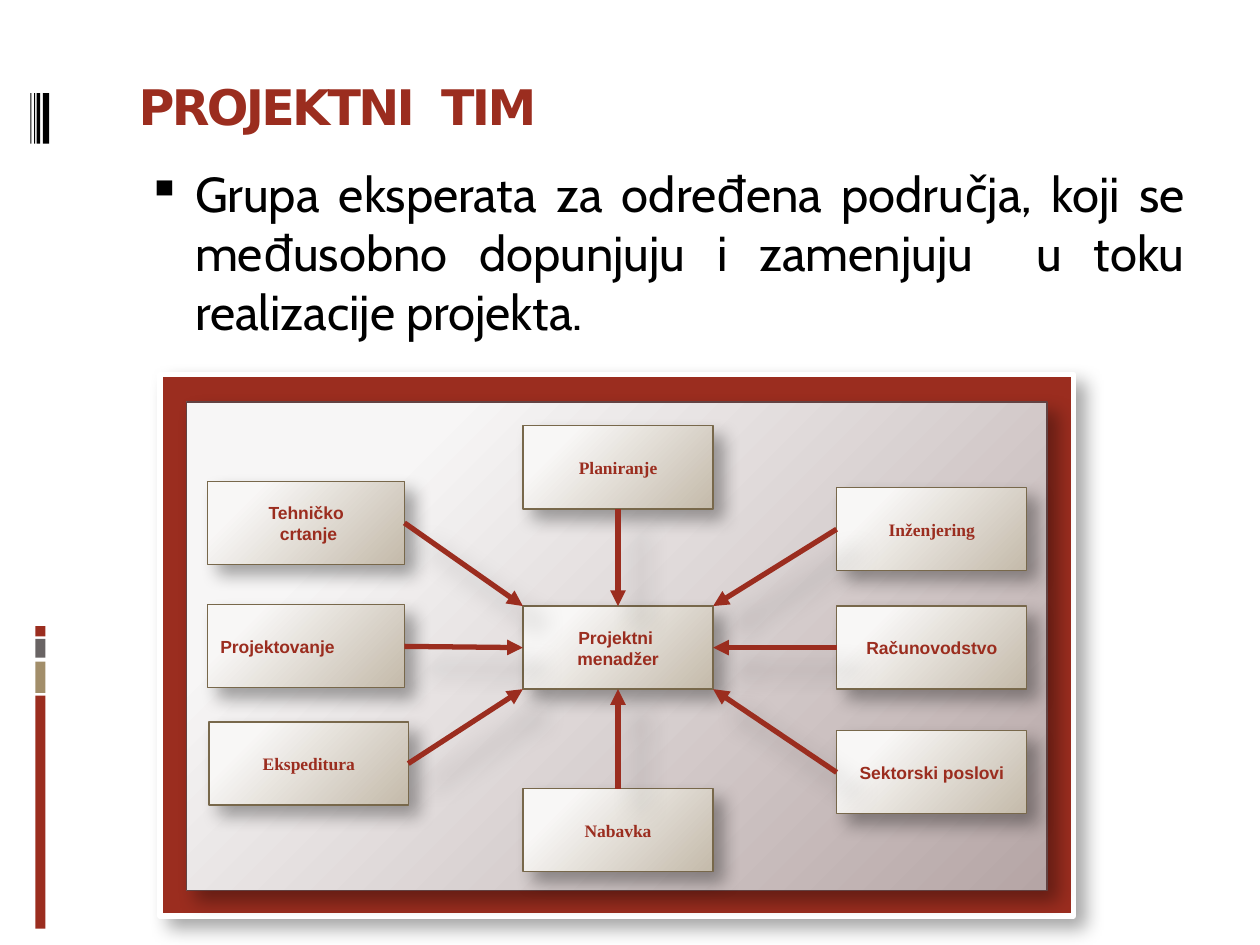
from dataclasses import dataclass

from lxml.etree import SubElement
from pptx import Presentation
from pptx.dml.color import RGBColor
from pptx.enum.shapes import MSO_CONNECTOR, MSO_SHAPE
from pptx.enum.text import MSO_ANCHOR, MSO_AUTO_SIZE, PP_ALIGN
from pptx.oxml.ns import qn
from pptx.util import Inches, Pt


@dataclass(frozen=True)
class Theme:
    red: str = "9B2D1F"
    sand: str = "A28E6A"
    gray: str = "696464"
    black: str = "000000"
    white: str = "FFFFFF"
    panel: tuple = ("F7F6F6", "B5A5A5", "624242")
    card: tuple = ("F8F7F6", "C4BAAA", "78684B")
    heading: int = 28
    label: int = 10


theme = Theme()


def write(frame, text, font, size, color, bold=False, align=PP_ALIGN.LEFT,
          anchor=MSO_ANCHOR.TOP, before=0, after=0):
    frame.word_wrap = True
    frame.auto_size = MSO_AUTO_SIZE.NONE
    frame.vertical_anchor = anchor
    for index, line in enumerate(text.split("\n")):
        para = frame.add_paragraph() if index else frame.paragraphs[0]
        para.alignment = align
        para.space_before, para.space_after = Pt(before), Pt(after)
        span = para.add_run()
        span.text = line
        span.font.name, span.font.size, span.font.bold = font, Pt(size), bold
        span.font.color.rgb = RGBColor.from_string(color)
    return frame.paragraphs[0]


def cast_shadow(shape, opacity=35, blur=10.2, distance=8):
    properties = shape._element.spPr
    for effects in properties.findall(qn("a:effectLst")):
        properties.remove(effects)
    effects = SubElement(properties, qn("a:effectLst"))
    shadow = SubElement(effects, qn("a:outerShdw"), blurRad=str(Pt(blur)),
                        dist=str(Pt(distance)), dir="2700000", algn="tl", rotWithShape="0")
    color = SubElement(shadow, qn("a:srgbClr"), val=theme.black)
    SubElement(color, qn("a:alpha"), val=str(opacity * 1000))


deck = Presentation()
deck.slide_width, deck.slide_height = Inches(10), Inches(7.5)
page = deck.slides.add_slide(deck.slide_layouts[5])

bars = [
    (0.28, 5.52, 0.08, 1.85, theme.red),
    (0.28, 5.25, 0.08, 0.25, theme.sand),
    (0.28, 5.07, 0.08, 0.15, theme.gray),
    (0.28, 4.97, 0.08, 0.08, theme.red),
]
bars += [(left, 0.74, width, 0.4, theme.black)
         for left, width in [(0.34, 0.05), (0.29, 0.03), (0.27, 0.01), (0.24, 0.01)]]
for *place, color in bars:
    bar = page.shapes.add_shape(MSO_SHAPE.RECTANGLE, *map(Inches, place))
    bar.shadow.inherit = False
    bar.fill.solid()
    bar.fill.fore_color.rgb = RGBColor.from_string(color)
    bar.line.fill.background()

title = page.shapes.title
title.left, title.top, title.width, title.height = map(Inches, (1, 0.56, 8.5, 1))
para = write(title.text_frame, "PROJEKTNI  TIM", "DejaVu Sans", theme.heading, theme.red, bold=True)
para.runs[0].font._element.set("spc", "-150")

body = page.shapes.add_textbox(*map(Inches, (1, 1.25, 8.5, 1.6)))
para = write(body.text_frame,
             "Grupa eksperata za određena područja, koji se međusobno dopunjuju "
             "i zamenjuju  u toku realizacije projekta.",
             "Cabin", theme.heading, theme.black, align=PP_ALIGN.JUSTIFY, before=7)
bullet = para._p.get_or_add_pPr()
bullet.set("marL", str(Inches(0.45)))
bullet.set("indent", str(Inches(-0.38)))
SubElement(bullet, qn("a:buSzPct"), val="95000")
SubElement(bullet, qn("a:buChar"), char="▪")

backdrop = page.shapes.add_shape(MSO_SHAPE.RECTANGLE, *map(Inches, (1.27, 2.97, 7.25, 4.3)))
backdrop.fill.solid()
backdrop.fill.fore_color.rgb = RGBColor.from_string(theme.red)
backdrop.line.color.rgb = RGBColor.from_string(theme.white)
backdrop.line.width = Pt(3)
cast_shadow(backdrop)

sans, serif = "Arial", "Times New Roman"
center, left_side = PP_ALIGN.CENTER, PP_ALIGN.LEFT
cards = [
    ("Tehničko\n crtanje", 1.65, 3.82, 1.56, sans, center, 0, 0),
    ("Projektovanje", 1.65, 4.8, 1.56, sans, left_side, 6, 6),
    ("Ekspeditura", 1.66, 5.73, 1.58, serif, center, 6, 0),
    ("Planiranje", 4.15, 3.38, 1.51, serif, center, 6, 0),
    ("Projektni \nmenadžer", 4.15, 4.81, 1.51, sans, center, 0, 0),
    ("Nabavka", 4.15, 6.26, 1.51, serif, center, 6, 0),
    ("Računovodstvo", 6.64, 4.81, 1.51, sans, center, 6, 10),
    ("Inženjering", 6.64, 3.87, 1.51, serif, center, 6, 0),
    ("Sektorski poslovi", 6.64, 5.8, 1.51, sans, center, 0, 10),
]
plates = [("", (1.48, 3.19, 6.83, 3.88), theme.panel, sans, center, 0, 0)]
plates += [(text, (left, top, width, 0.66), theme.card, font, align, before, after)
           for text, left, top, width, font, align, before, after in cards]
boxes = {}
for text, place, (light, dark, edge), font, align, before, after in plates:
    box = page.shapes.add_shape(MSO_SHAPE.RECTANGLE, *map(Inches, place))
    box.fill.gradient()
    for stop, position, color in zip(box.fill.gradient_stops, (0.2, 1), (light, dark)):
        stop.position = position
        stop.color.rgb = RGBColor.from_string(color)
    gradient = box._element.spPr.find(qn("a:gradFill"))
    gradient.remove(gradient.find(qn("a:lin")))
    circle = SubElement(gradient, qn("a:path"), path="circle")
    SubElement(circle, qn("a:fillToRect"), l="-15000", t="-15000", r="115000", b="115000")
    box.line.color.rgb = RGBColor.from_string(edge)
    box.line.width = Pt(0.75)
    cast_shadow(box)
    if text:
        write(box.text_frame, text, font, theme.label, theme.red, bold=True, align=align,
              anchor=MSO_ANCHOR.MIDDLE, before=before, after=after)
        boxes[text.split()[0]] = box

manager = boxes["Projektni"]
right, bottom = manager.left + manager.width, manager.top + manager.height
top_side, west_side, bottom_side, east_side = range(4)
arrows = [
    ("Projektovanje", east_side, west_side, None),
    ("Računovodstvo", west_side, east_side, None),
    ("Planiranje", bottom_side, top_side, None),
    ("Nabavka", top_side, bottom_side, None),
    ("Tehničko", east_side, None, (manager.left, manager.top)),
    ("Ekspeditura", east_side, None, (manager.left, bottom)),
    ("Inženjering", west_side, None, (right, manager.top)),
    ("Sektorski", west_side, None, (right, bottom)),
]
for name, start_side, end_side, corner in arrows:
    end = corner or (manager.left, manager.top)
    arrow = page.shapes.add_connector(MSO_CONNECTOR.STRAIGHT, *end, *end)
    arrow.begin_connect(boxes[name], start_side)
    if corner is None:
        arrow.end_connect(manager, end_side)
    arrow.line.color.rgb = RGBColor.from_string(theme.red)
    arrow.line.width = Pt(3)
    SubElement(arrow.line._get_or_add_ln(), qn("a:tailEnd"), type="triangle")
    cast_shadow(arrow, opacity=26, blur=15, distance=18)

deck.save("out.pptx")
